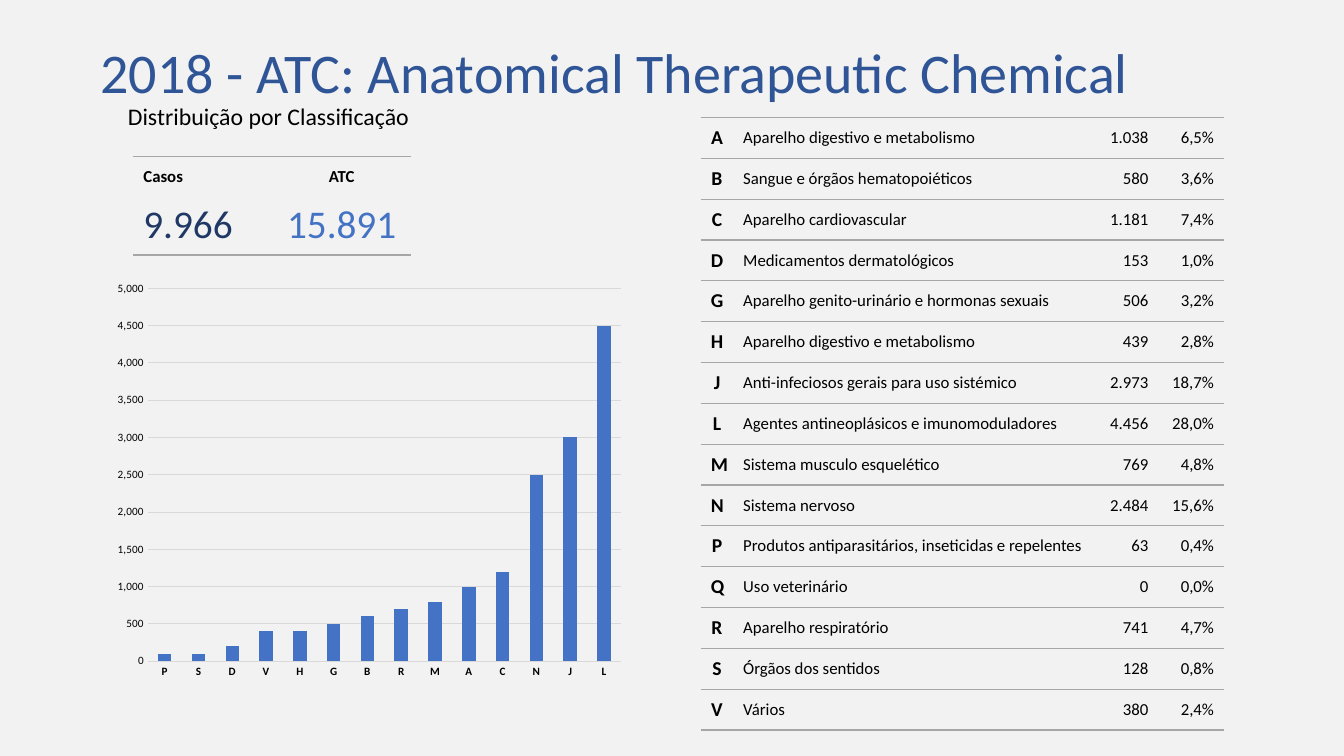
"""Build the 2018 ATC distribution slide with its chart and two tables."""
from collections import namedtuple
from lxml.etree import SubElement, fromstring
from pptx import Presentation
from pptx.chart.data import CategoryChartData
from pptx.dml.color import RGBColor
from pptx.enum.chart import XL_CHART_TYPE, XL_TICK_MARK
from pptx.enum.text import MSO_ANCHOR, PP_ALIGN
from pptx.oxml.ns import nsdecls, qn
from pptx.util import Inches, Pt

Theme = namedtuple("Theme", "font back ink title navy blue rule grid head sub big code body axis")
theme = Theme("Calibri", "F2F2F2", "000000", "2F5597", "203864", "4472C4", "A6A6A6", "D9D9D9",
              Pt(40), Pt(17), Pt(28), Pt(14), Pt(12), Pt(8))
color = RGBColor.from_string
left, mid, right = PP_ALIGN.LEFT, PP_ALIGN.CENTER, PP_ALIGN.RIGHT

deck = Presentation()
deck.slide_width, deck.slide_height = Inches(13.33), Inches(7.5)
slide = deck.slides.add_slide(deck.slide_layouts[6])
slide.background.fill.solid()
slide.background.fill.fore_color.rgb = color(theme.back)
shapes = slide.shapes


def box(x, y, wide, high):
    """Turn percent shares of the slide into lengths."""
    across, down = deck.slide_width / 100, deck.slide_height / 100
    return int(x * across), int(y * down), int(wide * across), int(high * down)


def write(frame, text, size, tint=theme.ink, bold=False, align=left):
    """Put one styled run into a text frame."""
    para = frame.paragraphs[0]
    para.alignment = align
    run = para.add_run()
    run.text = text
    run.font.name, run.font.size, run.font.bold = theme.font, size, bold
    run.font.color.rgb = color(tint)
    return para


groups = [
    ("A", "Aparelho digestivo e metabolismo", "1.038", "6,5%"),
    ("B", "Sangue e órgãos hematopoiéticos", "580", "3,6%"),
    ("C", "Aparelho cardiovascular", "1.181", "7,4%"),
    ("D", "Medicamentos dermatológicos", "153", "1,0%"),
    ("G", "Aparelho genito-urinário e hormonas sexuais", "506", "3,2%"),
    ("H", "Aparelho digestivo e metabolismo", "439", "2,8%"),
    ("J", "Anti-infeciosos gerais para uso sistémico", "2.973", "18,7%"),
    ("L", "Agentes antineoplásicos e imunomoduladores", "4.456", "28,0%"),
    ("M", "Sistema musculo esquelético", "769", "4,8%"),
    ("N", "Sistema nervoso", "2.484", "15,6%"),
    ("P", "Produtos antiparasitários, inseticidas e repelentes", "63", "0,4%"),
    ("Q", "Uso veterinário", "0", "0,0%"),
    ("R", "Aparelho respiratório", "741", "4,7%"),
    ("S", "Órgãos dos sentidos", "128", "0,8%"),
    ("V", "Vários", "380", "2,4%"),
]

counts = [(int(count.replace(".", "")), code) for code, name, count, share in groups]
bars = sorted(pair for pair in counts if pair[0])
data = CategoryChartData(number_format="#,##0")
data.categories = [code for count, code in bars]
data.add_series("Series 1", [round(count, -2) for count, code in bars])
chart = shapes.add_chart(XL_CHART_TYPE.COLUMN_STACKED, *box(8.75, 36.1, 39.5, 55.3), data).chart
chart.has_legend = chart.has_title = False
chart.font.name, chart.font.size = theme.font, Pt(10)
chart.font.color.rgb = color(theme.ink)

plot = chart.plots[0]
plot.gap_width, plot.overlap, plot.vary_by_categories = 150, 100, False
fill = plot.series[0].format.fill
fill.solid()
fill.fore_color.rgb = color(theme.blue)

for axis, bold in ((chart.category_axis, True), (chart.value_axis, False)):
    axis.major_tick_mark = axis.minor_tick_mark = XL_TICK_MARK.NONE
    axis.format.line.fill.background()
    font = axis.tick_labels.font
    font.name, font.size, font.bold = theme.font, theme.axis, bold
    font.color.rgb = color(theme.ink)
scale = chart.value_axis
scale.minimum_scale, scale.maximum_scale, scale.major_unit = 0, 5000, 500
scale.tick_labels.number_format = "#,##0"
scale.tick_labels.number_format_is_linked = False
scale.has_major_gridlines = True
scale.major_gridlines.format.line.color.rgb = color(theme.grid)
scale.major_gridlines.format.line.width = Pt(0.75)

area = plot._element.getparent()
for old in area.findall(qn("c:layout")):
    area.remove(old)
layout = fromstring(f"<c:layout {nsdecls('c')}><c:manualLayout/></c:layout>")
for tag, val in (("layoutTarget", "inner"), ("xMode", "edge"), ("yMode", "edge"),
                 ("x", "0.053"), ("y", "0.037"), ("w", "0.895"), ("h", "0.892")):
    SubElement(layout[0], qn("c:" + tag), val=val)
area.insert(0, layout)

for text, place, size, tint, align, anchor in (
        ("2018 - ATC: Anatomical Therapeutic Chemical", box(6.75, 5.33, 84.4, 8.4),
         theme.head, theme.title, left, MSO_ANCHOR.TOP),
        ("Distribuição por Classificação", box(8.78, 12.8, 26.93, 5.47),
         theme.sub, theme.ink, PP_ALIGN.JUSTIFY, MSO_ANCHOR.MIDDLE)):
    frame = shapes.add_textbox(*place).text_frame
    frame.word_wrap, frame.vertical_anchor = True, anchor
    write(frame, text, size, tint, align=align).line_spacing = 0.9

total = shapes.add_table(2, 2, *box(9.92, 20.67, 20.67, 13.07)).table
total.rows[0].height, total.rows[1].height = Inches(0.4), Inches(0.58)
for col, (label, count, tint, align) in enumerate((
        ("Casos", "9.966", theme.navy, left), ("ATC", "15.891", theme.blue, mid))):
    top, low = total.cell(0, col), total.cell(1, col)
    top.vertical_anchor = MSO_ANCHOR.MIDDLE
    write(top.text_frame, label, theme.body, bold=True, align=align)
    write(low.text_frame, count, theme.big, tint, align=align)

table = shapes.add_table(len(groups), 4, *box(52.15, 15.54, 38.93, 81.1)).table
for col, share in zip(table.columns, (2.4, 27, 4.65, 4.88)):
    col.width = int(deck.slide_width * share / 100)
for row, group in enumerate(groups):
    for col, (text, align) in enumerate(zip(group, (mid, left, right, right))):
        cell = table.cell(row, col)
        cell.vertical_anchor = MSO_ANCHOR.MIDDLE
        size = theme.body if col else theme.code
        write(cell.text_frame, text, size, bold=col == 0, align=align)

for grid, inner in ((total, False), (table, True)):
    grid.first_row = grid.horz_banding = False
    grid._tbl.tblPr.find(qn("a:tableStyleId")).text = "{2D5ABB26-0587-4C30-8999-92F81FD0307C}"
    last = len(grid.rows) - 1
    for row in range(last + 1):
        for col in range(len(grid.columns)):
            cell = grid.cell(row, col)
            props = cell._tc.get_or_add_tcPr()
            for side, drawn in (("lnT", inner or row == 0), ("lnB", inner or row == last)):
                if drawn:
                    line = SubElement(props, qn("a:" + side), w=str(Pt(1)))
                    SubElement(SubElement(line, qn("a:solidFill")), qn("a:srgbClr"), val=theme.rule)
            cell.fill.background()

deck.save("out.pptx")
